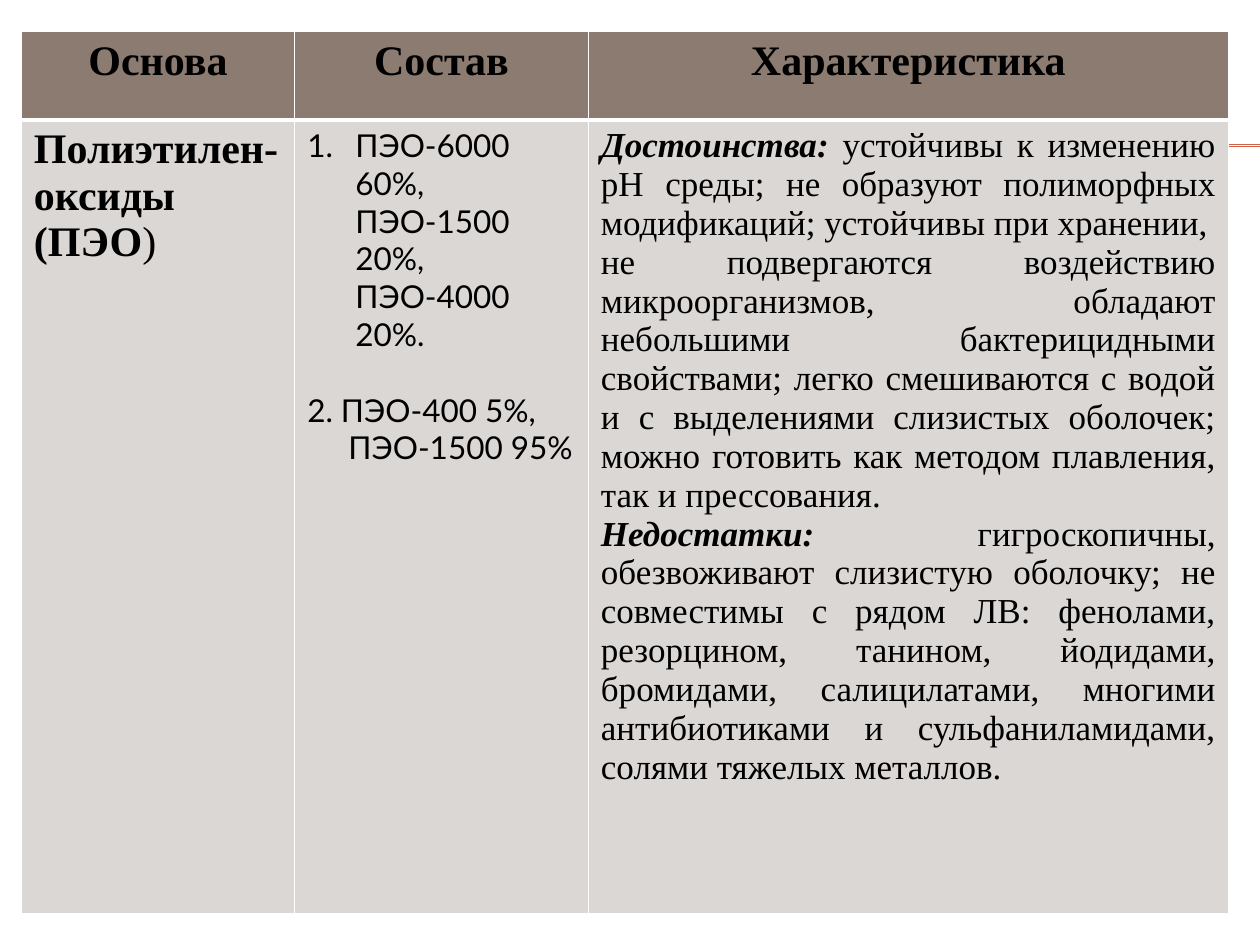
from dataclasses import dataclass

import lxml.etree
import pptx
import pptx.dml.color
import pptx.enum.shapes
import pptx.enum.text
import pptx.oxml.ns
import pptx.util

Cm = pptx.util.Cm
Pt = pptx.util.Pt
Align = pptx.enum.text.PP_ALIGN
qn = pptx.oxml.ns.qn

HEADER_FILL = "8C7B70"
BODY_FILL = "DAD7D5"
RULE_COLOUR = "D16349"
BORDER_COLOUR = "FFFFFF"
TEXT_COLOUR = "000000"
SERIF = "Times New Roman"
SANS = "Lato"


@dataclass(frozen=True)
class Phrase:
    text: str
    bold: bool = False
    italic: bool = False


@dataclass(frozen=True)
class Line:
    phrases: tuple[Phrase, ...]
    align: Align = Align.LEFT
    margin_cm: float = 0
    number: bool = False
    before_pt: float = 0


@dataclass(frozen=True)
class Entry:
    lines: tuple[Line, ...]
    font: str
    size: int
    fill: str
    bottom_pt: float = 1


def colour(value: str) -> pptx.dml.color.RGBColor:
    return pptx.dml.color.RGBColor.from_string(value)


def heading(text: str) -> Entry:
    title = Line((Phrase(text, bold=True),), Align.CENTER)
    return Entry((title,), SERIF, 24, HEADER_FILL, bottom_pt=3)


def component(text: str, margin_cm: float = 0, number: bool = False, before_pt: float = 0) -> Line:
    return Line((Phrase(text),), Align.LEFT, margin_cm, number, before_pt)


def trait(text: str, label: str = "") -> Line:
    lead = (Phrase(label, bold=True, italic=True),) if label else ()
    return Line(lead + (Phrase(text),), Align.JUSTIFY)


def write_line(paragraph, line: Line, font: str, size: int) -> None:
    paragraph.alignment = line.align
    paragraph.space_before = Pt(line.before_pt)
    properties = paragraph._p.get_or_add_pPr()
    properties.set("marL", str(Cm(line.margin_cm)))
    properties.set("indent", str(-Cm(line.margin_cm) if line.number else 0))
    if line.number:
        lxml.etree.SubElement(properties, qn("a:buFont"), typeface="+mj-lt")
        lxml.etree.SubElement(properties, qn("a:buAutoNum"), type="arabicPeriod")
    for phrase in line.phrases:
        run = paragraph.add_run()
        run.text = phrase.text
        run.font.name = font
        run.font.size = Pt(size)
        run.font.bold = phrase.bold
        run.font.italic = phrase.italic
        run.font.color.rgb = colour(TEXT_COLOUR)


def draw_borders(cell, bottom_pt: float) -> None:
    properties = cell._tc.get_or_add_tcPr()
    widths = {"lnL": 1, "lnR": 1, "lnT": 1, "lnB": bottom_pt}
    for position, (side, width) in enumerate(widths.items()):
        border = lxml.etree.Element(qn(f"a:{side}"), w=str(Pt(width)))
        fill = lxml.etree.SubElement(border, qn("a:solidFill"))
        lxml.etree.SubElement(fill, qn("a:srgbClr"), val=BORDER_COLOUR)
        properties.insert(position, border)


def fill_cell(cell, entry: Entry) -> None:
    cell.fill.solid()
    cell.fill.fore_color.rgb = colour(entry.fill)
    draw_borders(cell, entry.bottom_pt)
    for index, line in enumerate(entry.lines):
        frame = cell.text_frame
        paragraph = frame.add_paragraph() if index else frame.paragraphs[0]
        write_line(paragraph, line, entry.font, entry.size)


def draw_rule(slide, top_cm: float) -> None:
    rule = slide.shapes.add_connector(
        pptx.enum.shapes.MSO_CONNECTOR.STRAIGHT, Cm(1.42), Cm(top_cm), Cm(25.4), Cm(top_cm)
    )
    rule.line.color.rgb = colour(RULE_COLOUR)
    rule.line.width = Pt(0.75)
    lxml.etree.SubElement(rule._element.spPr, qn("a:effectLst"))


def draw_table(slide, entries: list[list[Entry]], widths: list[float], heights: list[float]) -> None:
    table = slide.shapes.add_table(
        len(heights), len(widths), Cm(0.43), Cm(0.64), Cm(sum(widths)), Cm(sum(heights))
    ).table
    for column, width in zip(table.columns, widths):
        column.width = Cm(width)
    for row, height, row_entries in zip(table.rows, heights, entries):
        row.height = Cm(height)
        for cell, entry in zip(row.cells, row_entries):
            fill_cell(cell, entry)


HEADINGS = [heading(text) for text in ("Основа", "Состав", "Характеристика")]

BASE = Entry(
    (Line((Phrase("Полиэтилен-оксиды (ПЭО", bold=True), Phrase(")"))),),
    SERIF, 24, BODY_FILL,
)

COMPOSITION = Entry(
    (
        component("ПЭО-6000 60%,", 0.97, number=True),
        component("ПЭО-1500 20%,", 0.97),
        component("ПЭО-4000 20%.", 0.97),
        component("2. ПЭО-400 5%,", before_pt=21.6),
        component("ПЭО-1500 95%", 0.83),
    ),
    SANS, 18, BODY_FILL,
)

CHARACTERISTICS = Entry(
    (
        trait(
            "устойчивы к изменению рН среды; не образуют полиморфных модификаций; "
            "устойчивы при хранении,",
            "Достоинства: ",
        ),
        trait(
            "не подвергаются воздействию микроорганизмов, обладают небольшими "
            "бактерицидными свойствами; легко смешиваются с водой и с выделениями "
            "слизистых оболочек; можно готовить как методом плавления, так и прессования."
        ),
        trait(
            "гигроскопичны, обезвоживают слизистую оболочку; не совместимы с рядом ЛВ: "
            "фенолами, резорцином, танином, йодидами, бромидами, салицилатами, многими "
            "антибиотиками и сульфаниламидами, солями тяжелых металлов.",
            "Недостатки: ",
        ),
    ),
    SERIF, 20, BODY_FILL,
)


def main() -> None:
    presentation = pptx.Presentation()
    presentation.slide_width = Cm(25.4)
    presentation.slide_height = Cm(19.05)
    slide = presentation.slides.add_slide(presentation.slide_layouts[6])
    for top_cm in (2.92, 2.95):
        draw_rule(slide, top_cm)
    draw_table(
        slide,
        [HEADINGS, [BASE, COMPOSITION, CHARACTERISTICS]],
        widths=[5.51, 5.92, 12.9],
        heights=[1.78, 16],
    )
    presentation.save("out.pptx")


if __name__ == "__main__":
    main()
